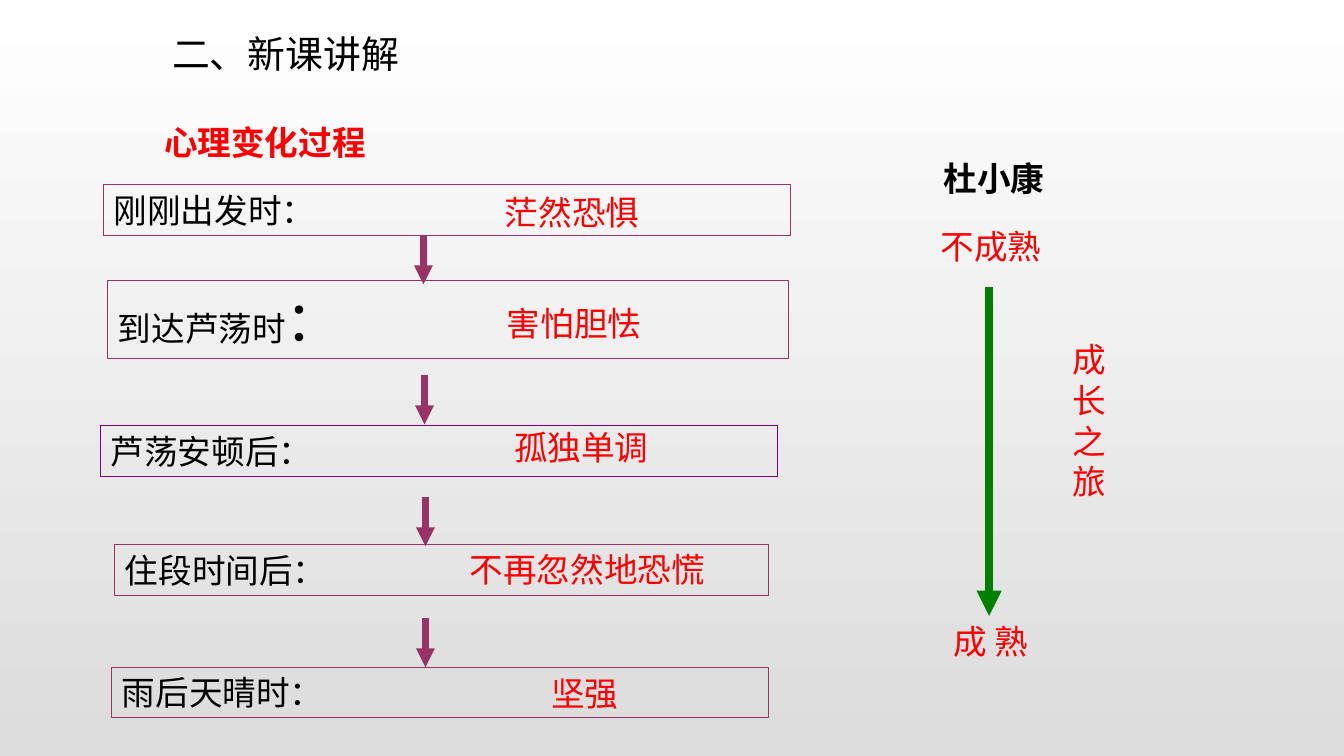
from lxml.etree import SubElement as Sub
from pptx import Presentation
from pptx.dml.color import RGBColor
from pptx.enum.shapes import MSO_CONNECTOR as Conn, MSO_SHAPE as Shape
from pptx.enum.text import MSO_ANCHOR as Anchor, PP_ALIGN as Align
from pptx.oxml.ns import qn
from pptx.util import Inches, Pt

BLACK = RGBColor(0x00, 0x00, 0x00)
RED = RGBColor(0xFF, 0x00, 0x00)
PLUM = RGBColor(0x99, 0x33, 0x66)
PURPLE = RGBColor(0x80, 0x00, 0x80)
GREEN = RGBColor(0x00, 0x80, 0x00)
WHITE = RGBColor(0xFF, 0xFF, 0xFF)
GREY = RGBColor(0xDC, 0xDC, 0xDC)
SERIF, SANS = "Times New Roman", "Noto Sans CJK SC"
SIZE, LINE = 24, 0.5

# Stages: frame (left, top, width, height), edge, label runs, mood and its (left, top, width)
STAGES = [
    ((1.03, 1.83, 6.81, 0.51), PLUM, [("刚刚出发时：", SIZE)],
     "茫然恐惧", (4.91, 1.85, 4.54)),
    ((1.07, 2.78, 6.75, 0.78), PLUM, [("到达芦荡时", SIZE), ("：", 40)],
     "害怕胆怯", (4.93, 2.96, 3.99)),
    ((1.0, 4.22, 6.71, 0.51), PURPLE, [("芦荡安顿后：", SIZE)],
     "孤独单调", (5.0, 4.19, 4.31)),
    ((1.14, 5.4, 6.48, 0.51), PLUM, [("住段时间后：", SIZE)],
     "不再忽然地恐慌", (4.56, 5.4, 5.61)),
    ((1.11, 6.62, 6.51, 0.5), PLUM, [("雨后天晴时：", SIZE)],
     "坚强", (5.37, 6.63, 2.45)),
]
# Arrows: x, top, length, colour, weight
STEP = 0.49
ARROWS = [
    (4.2, 2.33, STEP, PLUM, 4.5),
    (4.21, 3.72, STEP, PLUM, 4.5),
    (4.22, 4.93, STEP, PLUM, 4.5),
    (4.22, 6.13, STEP, PLUM, 4.5),
    (9.81, 2.85, 3.26, GREEN, 6),
]
# Notes: text, place, font, colour, bold
NOTES = [
    ("心理变化过程", (1.53, 1.16, 2.2, LINE), SERIF, RED, True),
    ("杜小康", (9.26, 1.52, 1.21, LINE), SERIF, BLACK, True),
    ("不成熟", (9.23, 2.19, 1.2, LINE), SANS, RED, False),
    ("成 熟", (9.36, 6.11, 2.44, LINE), SANS, RED, False),
]
TITLE = ("二、新课讲解", (1.61, 0.29, 2.8, 0.54), 27)
TRIP = ("成长之旅", (10.54, 3.32, 0.54, 1.7))

deck = Presentation()
deck.slide_width, deck.slide_height = Inches(13.33), Inches(7.5)
slide = deck.slides.add_slide(deck.slide_layouts[6])
shapes = slide.shapes


def place(box):
    return [Inches(v) for v in box]


def write(shape, lines, font=SERIF, color=RED, bold=False, wrap=True):
    """Fill a shape with lines, each a list of (text, size) runs."""
    frame = shape.text_frame
    frame.word_wrap = wrap
    frame.vertical_anchor = Anchor.MIDDLE
    for i, runs in enumerate(lines):
        para = frame.add_paragraph() if i else frame.paragraphs[0]
        para.alignment = Align.LEFT
        for text, size in runs:
            run = para.add_run()
            run.text = text
            run.font.name, run.font.size = font, Pt(size)
            run.font.bold, run.font.color.rgb = bold, color
            Sub(run.font._element, qn("a:ea")).set("typeface", SANS)
    return frame.paragraphs


def note(lines, box, **look):
    return write(shapes.add_textbox(*place(box)), lines, **look)


def arrow(x, top, length, color, weight):
    line = shapes.add_connector(
        Conn.STRAIGHT, *place((x, top, x, top + length)))
    line.line.color.rgb, line.line.width = color, Pt(weight)
    Sub(line.line._get_or_add_ln(), qn("a:tailEnd")).set("type", "triangle")
    Sub(line._element.spPr, qn("a:effectLst"))


# Background
fill = slide.background.fill
fill.gradient()
fill.gradient_angle = 270
for stop, color, pos in zip(fill.gradient_stops, (WHITE, GREY), (0, 1)):
    stop.color.rgb, stop.position = color, pos

# Stage frames with their moods
for box, edge, label, mood, spot in STAGES:
    frame = shapes.add_shape(Shape.RECTANGLE, *place(box))
    frame.shadow.inherit = False
    frame.fill.background()
    frame.line.color.rgb, frame.line.width = edge, Pt(0.75)
    write(frame, [label], color=BLACK)
    note([[(mood, SIZE)]], (*spot, LINE))

# Arrows
for item in ARROWS:
    arrow(*item)

# Headings and the two ends of the growth line
for text, box, font, color, bold in NOTES:
    note([[(text, SIZE)]], box, font=font, color=color, bold=bold, wrap=False if box[2] < 2.4 else True)

# Upright words beside the growth line
text, box = TRIP
for para in note([[(sign, SIZE)] for sign in text], box, wrap=False):
    para.line_spacing = Pt(29)

# Title
text, box, size = TITLE
for para in note([[(text, size)]], box, font=SANS, color=BLACK):
    para.line_spacing = 0.9

deck.save("out.pptx")
